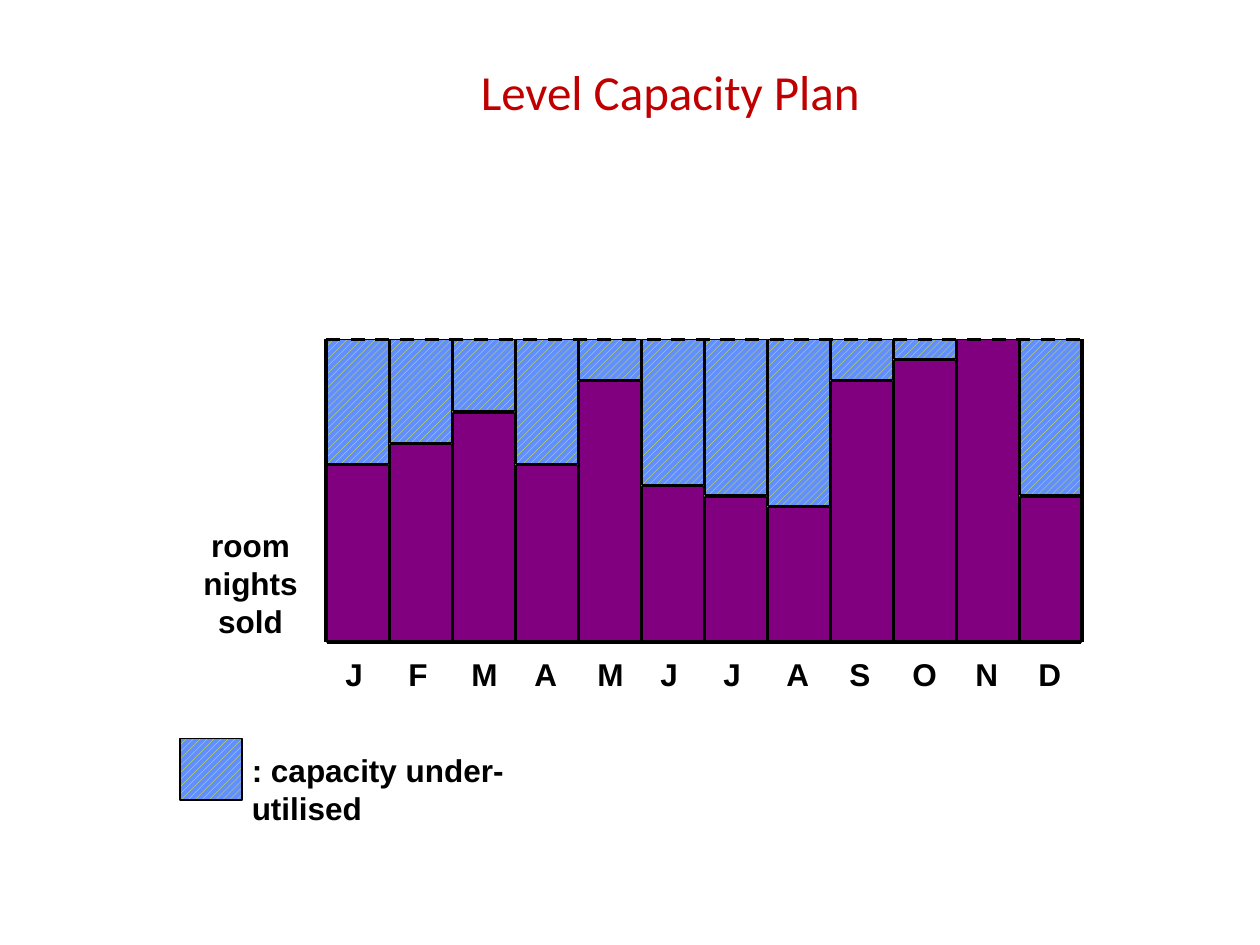
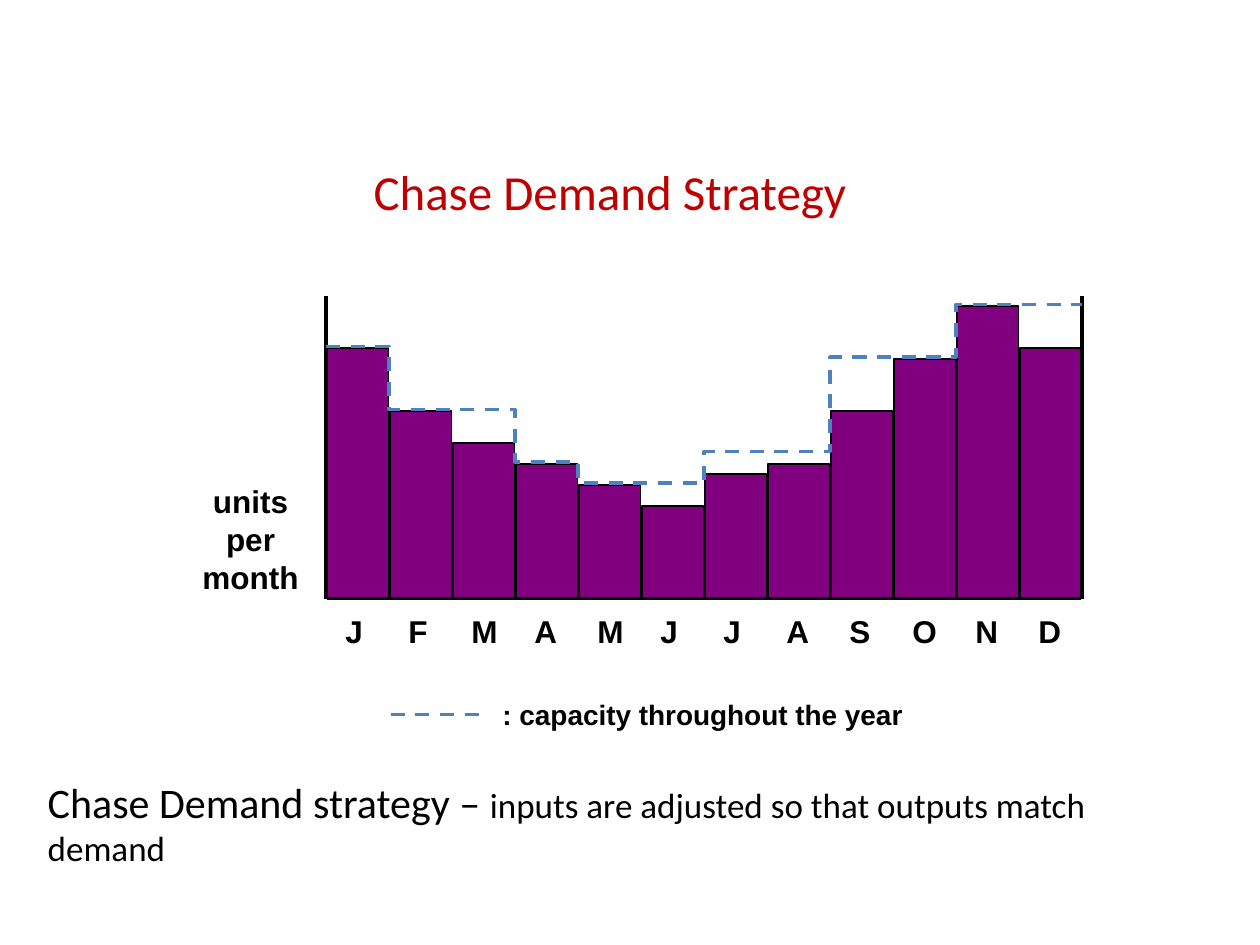
"""Build two capacity planning slides with monthly bar diagrams."""
from lxml.etree import SubElement
from pptx import Presentation
from pptx.dml.color import RGBColor
from pptx.enum.dml import MSO_LINE, MSO_PATTERN
from pptx.enum.shapes import MSO_CONNECTOR, MSO_SHAPE
from pptx.enum.text import PP_ALIGN
from pptx.oxml.ns import qn
from pptx.util import Pt

BLACK, RED, PURPLE = "000000", "C00000", "800080"
BLUE, HATCH_BLUE, HATCH_YELLOW = "4F81BD", "618FFD", "FAFD00"
MONTHS = "JFMAMJJASOND"
PITCH, BAR_WIDTH, UNIT = 36, 35.3, 6
LEFT = 186.3
RIGHT = LEFT + PITCH * len(MONTHS)
AXIS_HEIGHT = 173


def add_text(page, text, left, top, width, height, size=18, name="Arial",
             color=BLACK, align=PP_ALIGN.LEFT):
    box = page.shapes.add_textbox(Pt(left), Pt(top), Pt(width), Pt(height))
    box.text_frame.word_wrap = True
    para = box.text_frame.paragraphs[0]
    para.alignment = align
    para.add_run().text = text
    para.font.size = Pt(size)
    para.font.name = name
    para.font.bold = name == "Arial"
    para.font.color.rgb = RGBColor.from_string(color)
    return para


def add_bar(page, left, top, width, height, hatched=False):
    bar = page.shapes.add_shape(MSO_SHAPE.RECTANGLE, Pt(left), Pt(top), Pt(width), Pt(height))
    bar.shadow.inherit = False
    if hatched:
        bar.fill.patterned()
        bar.fill.pattern = MSO_PATTERN.WIDE_UPWARD_DIAGONAL
        bar.fill.fore_color.rgb = RGBColor.from_string(HATCH_YELLOW)
        bar.fill.back_color.rgb = RGBColor.from_string(HATCH_BLUE)
    else:
        bar.fill.solid()
        bar.fill.fore_color.rgb = RGBColor.from_string(PURPLE)
    bar.line.color.rgb = RGBColor.from_string(BLACK)
    bar.line.width = Pt(1)


deck = Presentation()
deck.slide_width, deck.slide_height = Pt(720), Pt(540)
level_page = deck.slides.add_slide(deck.slide_layouts[6])
chase_page = deck.slides.add_slide(deck.slide_layouts[6])

level_base, chase_base = 367, 342
level_top = level_base - AXIS_HEIGHT
level_demand = [17, 19, 22, 17, 25, 15, 14, 13, 25, 27, 29, 14]
chase_demand = [24, 18, 15, 13, 11, 9, 12, 13, 18, 23, 28, 24]
chase_capacity = [24, 18, 18, 13, 11, 11, 14, 14, 23, 23, 28, 28]
level_capacity = max(level_demand)

lines = [
    (level_page, LEFT, level_top, RIGHT, level_top, BLACK, True),
    (chase_page, 223.2, 408.2, 275, 408.2, BLUE, True),
]
diagrams = [
    (level_page, "Level Capacity Plan", 77, 31.7, "room nights sold", level_base, level_demand),
    (chase_page, "Chase Demand Strategy", 42.5, 88.6, "units per month", chase_base, chase_demand),
]
for page, title, title_left, title_top, axis_title, base, demand in diagrams:
    add_text(page, title, title_left, title_top, 612, 66, 28, "Calibri", RED, PP_ALIGN.CENTER)
    add_text(page, axis_title, 100, base - 70, 86.4, 72, align=PP_ALIGN.CENTER)
    for index, (month, units) in enumerate(zip(MONTHS, demand)):
        left = LEFT + index * PITCH
        height = units * UNIT - 1
        add_bar(page, left + 0.5, base - height, BAR_WIDTH, height)
        add_text(page, month, left + 4, base + 4, PITCH, 29.5)
    lines += [(page, x, base - AXIS_HEIGHT, x, base, BLACK, False) for x in (LEFT, RIGHT)]
    lines.append((page, LEFT + 0.8, base, RIGHT - 0.8, base, BLACK, False))

for index, units in enumerate(level_demand):
    if units < level_capacity:
        spare_height = (level_capacity - units) * UNIT - 1
        add_bar(level_page, LEFT + 0.5 + index * PITCH, level_top, BAR_WIDTH, spare_height, True)
add_bar(level_page, 103, 422, 35.3, 35.3, True)
add_text(level_page, ": capacity under-utilised", 136.8, 425.5, 190, 50)

for page, x1, y1, x2, y2, color, dashed in lines:
    line = page.shapes.add_connector(MSO_CONNECTOR.STRAIGHT, Pt(x1), Pt(y1), Pt(x2), Pt(y2))
    line.line.color.rgb = RGBColor.from_string(color)
    line.line.width = Pt(2)
    if dashed:
        line.line.dash_style = MSO_LINE.DASH
    SubElement(line._element.spPr, qn("a:effectLst"))

steps = []
for index, units in enumerate(chase_capacity):
    left, level = LEFT + index * PITCH, chase_base - units * UNIT
    steps += [(Pt(left), Pt(level)), (Pt(left + PITCH), Pt(level))]
builder = chase_page.shapes.build_freeform(*steps[0])
builder.add_line_segments(steps[1:], close=False)
capacity_line = builder.convert_to_shape()
capacity_line.shadow.inherit = False
capacity_line.fill.background()
capacity_line.line.color.rgb = RGBColor.from_string(BLUE)
capacity_line.line.width = Pt(2)
capacity_line.line.dash_style = MSO_LINE.DASH

add_text(chase_page, ": capacity throughout the year", 280, 395.3, 270, 26, 16)
summary = add_text(chase_page, "Chase Demand strategy – ", 20.2, 440, 672.5, 60.5, 24, "Calibri")
span = summary.add_run()
span.text = "inputs are adjusted so that outputs match demand"
span.font.size = Pt(20)

deck.save("out.pptx")
